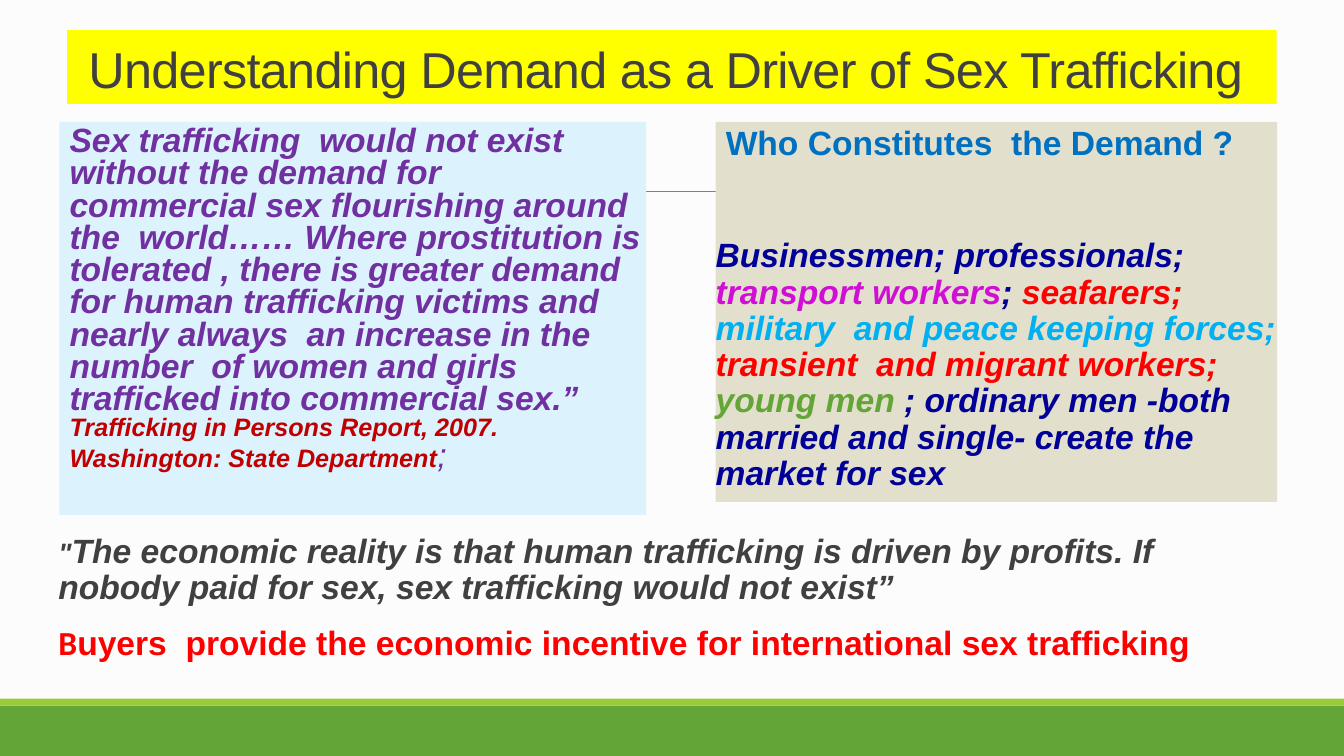
from pptx import Presentation
from pptx.dml.color import RGBColor
from pptx.enum.shapes import MSO_CONNECTOR as LINE, MSO_SHAPE as SHAPE
from pptx.enum.text import MSO_ANCHOR as ANCHOR, MSO_AUTO_SIZE as FIT, PP_ALIGN as ALIGN
from pptx.oxml.ns import qn
from pptx.util import Inches, Pt

PAPER = RGBColor(0xFC, 0xFC, 0xFC)
GREEN = RGBColor(0x63, 0xA5, 0x37)
LIME = RGBColor(0x99, 0xCB, 0x38)
GRAY = RGBColor(0x80, 0x80, 0x80)
DARK = RGBColor(0x40, 0x40, 0x40)
YELLOW = RGBColor(0xFF, 0xFF, 0x00)
SKY = RGBColor(0xDC, 0xF3, 0xFE)
SAND = RGBColor(0xE2, 0xDF, 0xCC)
PURPLE = RGBColor(0x70, 0x30, 0xA0)
MAROON = RGBColor(0xC0, 0x00, 0x00)
BLUE = RGBColor(0x00, 0x70, 0xC0)
NAVY = RGBColor(0x00, 0x00, 0x99)
PINK = RGBColor(0xD0, 0x0E, 0xD5)
RED = RGBColor(0xFF, 0x00, 0x00)
CYAN = RGBColor(0x00, 0xB0, 0xF0)

WIDE, HIGH = Inches(13.333), Inches(7.5)
INDENT = Inches(0.1)
BASE = {"name": "Arial", "size": Pt(24), "bold": True, "italic": True}


def place(x, y, w, h):
    """Turn percentages of the slide into lengths."""
    return [round(part * side / 100) for part, side in zip((x, y, w, h), (WIDE, HIGH) * 2)]


def write(para, text, color, **style):
    run = para.add_run()
    run.text = text
    for key, value in (BASE | style).items():
        setattr(run.font, key, value)
    run.font.color.rgb = color
    return run


def add_bar(slide, box, color):
    bar = slide.shapes.add_shape(SHAPE.RECTANGLE, *place(*box))
    bar.shadow.inherit = False
    bar.fill.solid()
    bar.fill.fore_color.rgb = color
    bar.line.fill.background()


def add_rule(slide, left, right, top):
    x, y, end, _ = place(left, top, right, 0)
    rule = slide.shapes.add_connector(LINE.STRAIGHT, x, y, end, y)
    rule.line.color.rgb = GRAY
    rule.line.width = Pt(0.5)
    props = rule._element.spPr
    props.append(props.makeelement(qn("a:effectLst"), {}))


def add_title(slide, box, text):
    title = slide.shapes.title
    title.left, title.top, title.width, title.height = place(*box)
    title.fill.solid()
    title.fill.fore_color.rgb = YELLOW
    frame = title.text_frame
    frame.auto_size = FIT.NONE
    frame.word_wrap = True
    frame.vertical_anchor = ANCHOR.BOTTOM
    para = frame.paragraphs[0]
    para.alignment = ALIGN.CENTER
    para.line_spacing = 0.85
    run = write(para, text, DARK, size=Pt(36), bold=False, italic=False)
    run.font._element.set("spc", "-50")


def add_panel(slide, box, paras, fill=None, spacing=0.9, right=0):
    """Each paragraph is (indent, space before, runs)."""
    panel = slide.shapes.add_textbox(*place(*box))
    if fill is not None:
        panel.fill.solid()
        panel.fill.fore_color.rgb = fill
    frame = panel.text_frame
    frame.word_wrap = True
    frame.margin_left, frame.margin_right = 0, right
    for i, (indent, before, runs) in enumerate(paras):
        para = frame.add_paragraph() if i else frame.paragraphs[0]
        para.line_spacing = spacing
        para.space_before, para.space_after = Pt(before), Pt(2)
        para._p.get_or_add_pPr().set("marL", str(indent))
        for text, color, style in runs:
            write(para, text, color, **style)


def add_quote(slide, box):
    add_panel(slide, box, [(INDENT, 0, [
        ("Sex trafficking  would not exist  without the demand for  commercial sex "
         "flourishing around the  world…… Where prostitution is tolerated , there is "
         "greater demand  for human trafficking victims and nearly always  an increase "
         "in the number  of women and girls trafficked into commercial sex.” ", PURPLE, {}),
        ("Trafficking in Persons Report, 2007. Washington: State Department",
         MAROON, {"size": Pt(18)}),
        (";", PURPLE, {"bold": False}),
    ])], SKY, 0.8, Inches(0.02))


def add_buyers(slide, box):
    groups = [
        ("Businessmen; professionals; ", NAVY), ("transport workers", PINK),
        ("; ", NAVY), ("seafarers; ", RED),
        ("military  and peace keeping forces; ", CYAN),
        ("transient  and migrant workers; ", RED), ("young men ", GREEN),
        ("; ordinary men -both married and single- create the market for sex", NAVY),
    ]
    add_panel(slide, box, [
        (INDENT, 0, [("Who Constitutes  the Demand ?", BLUE, {"italic": False})]),
        (0, 52, [(text, color, {}) for text, color in groups]),
    ], SAND)


def add_close(slide, box):
    add_panel(slide, box, [
        (INDENT, 0, [
            ('"', DARK, {"size": Pt(20)}),
            ("The economic reality is that human trafficking is driven by profits. If "
             "nobody paid for sex, sex trafficking would not exist”", DARK, {}),
        ]),
        (INDENT, 12, [
            ("B", RED, {"name": "Calibri", "italic": False}),
            ("uyers  provide the economic incentive for international sex trafficking",
             RED, {"italic": False}),
        ]),
    ])


def main():
    deck = Presentation()
    deck.slide_width, deck.slide_height = WIDE, HIGH
    slide = deck.slides.add_slide(deck.slide_layouts[5])
    slide.background.fill.solid()
    slide.background.fill.fore_color.rgb = PAPER
    add_bar(slide, (0, 93.33, 100, 6.67), GREEN)
    add_bar(slide, (0, 92.4, 100, 0.93), LIME)
    add_rule(slide, 9.83, 91.58, 25.33)
    add_title(slide, (5, 4, 90, 9.73), "Understanding Demand as a Driver of Sex Trafficking ")
    add_quote(slide, (4.43, 16.13, 43.65, 52))
    add_buyers(slide, (53.25, 16.13, 41.78, 50.27))
    add_close(slide, (3.6, 70, 89.7, 19.33))
    deck.save("out.pptx")


if __name__ == "__main__":
    main()
